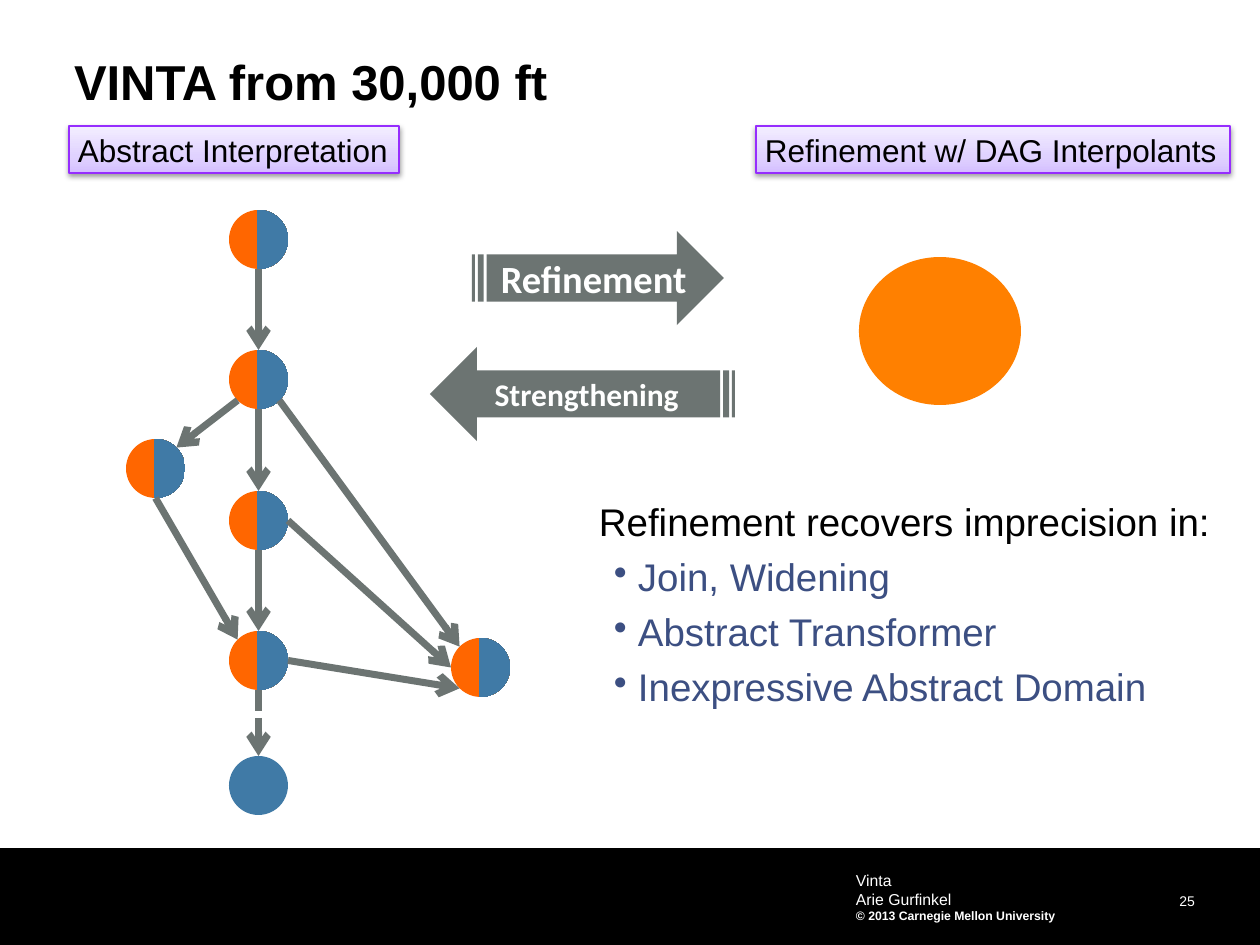
from math import cos, radians, sin

from lxml.etree import SubElement
from pptx import Presentation
from pptx.dml.color import RGBColor
from pptx.enum.dml import MSO_LINE
from pptx.enum.shapes import MSO_CONNECTOR, MSO_SHAPE
from pptx.enum.text import MSO_ANCHOR, PP_ALIGN
from pptx.oxml.ns import qn
from pptx.util import Pt

PX = 914400 / 126
BLACK = RGBColor(0x00, 0x00, 0x00)
WHITE = RGBColor(0xFF, 0xFF, 0xFF)
GRAY = RGBColor(0x6C, 0x74, 0x72)
ORANGE = RGBColor(0xFF, 0x80, 0x00)
NODE_ORANGE = RGBColor(0xFF, 0x66, 0x00)
NODE_BLUE = RGBColor(0x40, 0x7A, 0xA6)
NAVY = RGBColor(0x3C, 0x4F, 0x82)
PURPLE = RGBColor(0x96, 0x2D, 0xFE)
LABEL_STOPS = [(0, RGBColor(0xD4, 0xBF, 0xFF)), (35, RGBColor(0xE0, 0xD2, 0xFF)),
               (100, RGBColor(0xF3, 0xEE, 0xFF))]
NODE_STOPS = [(47, NODE_ORANGE), (48, NODE_BLUE)]


def add_filled(kind, box, fill, angle=0):
    """Add a preset shape; fill is a colour or a list of (percent, colour) stops."""
    shape = slide.shapes.add_shape(kind, *[round(value * PX) for value in box])
    shape.shadow.inherit = False
    shape.line.fill.background()
    if isinstance(fill, RGBColor):
        shape.fill.solid()
        shape.fill.fore_color.rgb = fill
        return shape
    shape.fill.gradient()
    gradient = shape._element.spPr.find(qn("a:gradFill"))
    for child in list(gradient):
        gradient.remove(child)
    stops = SubElement(gradient, qn("a:gsLst"))
    for percent, color in fill:
        stop = SubElement(stops, qn("a:gs"), pos=str(percent * 1000))
        SubElement(stop, qn("a:srgbClr"), val=str(color))
    SubElement(gradient, qn("a:lin"), ang=str(angle * 60000), scaled="0")
    return shape


def write(shape, lines, margins=(0, 0), anchor=MSO_ANCHOR.TOP, wrap=True, **paragraph_format):
    """Fill a shape with (text, size, bold, colour, font) lines; margins are in px."""
    frame = shape.text_frame
    side, edge = [round(value * PX) for value in margins]
    frame_format = {"margin_left": side, "margin_right": side, "margin_top": edge,
                    "margin_bottom": edge, "vertical_anchor": anchor, "word_wrap": wrap}
    for name, value in frame_format.items():
        setattr(frame, name, value)
    for index, (text, size, bold, color, font) in enumerate(lines):
        paragraph = frame.add_paragraph() if index else frame.paragraphs[0]
        for name, value in paragraph_format.items():
            setattr(paragraph, name, value)
        run = paragraph.add_run()
        run.text = text
        for name, value in {"size": Pt(size), "bold": bold, "name": font}.items():
            setattr(run.font, name, value)
        run.font.color.rgb = color


presentation = Presentation()
presentation.slide_width = round(1260 * PX)
presentation.slide_height = round(945 * PX)
slide = presentation.slides.add_slide(presentation.slide_layouts[5])

# Footer
add_filled(MSO_SHAPE.RECTANGLE, (0, 848, 1260, 97), BLACK)
page_number = slide.shapes.add_textbox(*[round(value * PX) for value in (1079, 886, 116, 23)])
write(page_number, [("25", 8, False, WHITE, "Arial")], anchor=MSO_ANCHOR.MIDDLE,
      alignment=PP_ALIGN.RIGHT, line_spacing=Pt(13))
credit = slide.shapes.add_textbox(*[round(value * PX) for value in (850, 864, 315, 66)])
write(credit, [("Vinta", 9, False, WHITE, "Arial"),
               ("Arie Gurfinkel", 9, False, WHITE, "Arial"),
               ("© 2013 Carnegie Mellon University", 7, True, WHITE, "Arial")],
      margins=(6, 6), anchor=MSO_ANCHOR.MIDDLE)

# Title
title = slide.shapes.title
title_box = {"left": 74, "top": 58, "width": 1124, "height": 53}
for name, value in title_box.items():
    setattr(title, name, round(value * PX))
write(title, [("VINTA from 30,000 ft", 28, True, BLACK, "Arial")],
      alignment=PP_ALIGN.LEFT, line_spacing=0.9)

# Column labels
for text, left, width in [("Abstract Interpretation", 69, 330),
                          ("Refinement w/ DAG Interpolants", 756, 474)]:
    label = add_filled(MSO_SHAPE.RECTANGLE, (left, 126, width, 47), LABEL_STOPS, 270)
    label.line.color.rgb = PURPLE
    label.line.width = Pt(0.75)
    effects = label._element.spPr.find(qn("a:effectLst"))
    shadow = SubElement(effects, qn("a:outerShdw"), blurRad="40000", dist="20000",
                        dir="5400000", rotWithShape="0")
    shadow_color = SubElement(shadow, qn("a:srgbClr"), val=str(BLACK))
    SubElement(shadow_color, qn("a:alpha"), val="38000")
    write(label, [(text, 18, False, BLACK, "Arial")], margins=(9, 5), wrap=False,
          alignment=PP_ALIGN.LEFT)

# Exchange between the two phases
for text, size, box, flipped in [("Refinement", 22, (472, 231, 252, 94), False),
                                 ("Strengthening", 18, (430, 347, 305, 94), True)]:
    arrow = add_filled(MSO_SHAPE.STRIPED_RIGHT_ARROW, box, GRAY)
    if flipped:
        arrow._element.spPr.find(qn("a:xfrm")).set("flipH", "1")
    write(arrow, [(text, size, True, WHITE, "Calibri")], margins=(9, 5),
          anchor=MSO_ANCHOR.MIDDLE, alignment=PP_ALIGN.CENTER)
add_filled(MSO_SHAPE.OVAL, (859, 257, 162, 148), ORANGE)

# Sources of imprecision
body = slide.shapes.add_textbox(*[round(value * PX) for value in (599, 501, 636, 367)])
causes = ["Join, Widening", "Abstract Transformer", "Inexpressive Abstract Domain"]
write(body, [("Refinement recovers imprecision in:", 22, False, BLACK, "Arial")]
      + [(cause, 22, False, NAVY, "Arial") for cause in causes],
      line_spacing=0.95, space_after=Pt(6.5))
for paragraph in body.text_frame.paragraphs[1:]:
    properties = paragraph._p.get_or_add_pPr()
    properties.set("marL", str(round(39 * PX)))
    properties.set("indent", str(round(-24 * PX)))
    SubElement(properties, qn("a:buChar"), char="•")
    paragraph.level = 1

# Control-flow graph: edges join compass points on the node circles
DIAMETER = 59
NODES = {"entry": (229, 210), "branch": (229, 350), "middle": (229, 491),
         "join": (229, 631), "left": (126, 439), "right": (451, 638), "exit": (229, 756)}
COMPASS = {"E": 0, "SE": 45, "S": 90, "SW": 135, "W": 180, "NW": 225, "N": 270, "NE": 315}
EDGES = [("entry", "S", "branch", "N"), ("branch", "S", "middle", "N"),
         ("middle", "S", "join", "N"), ("branch", "SE", "right", "NW"),
         ("middle", "E", "right", "W"), ("join", "E", "right", "SW"),
         ("branch", "SW", "left", "NE"), ("left", "S", "join", "NW"),
         ("join", "S", "exit", "N")]
for name, (left, top) in NODES.items():
    add_filled(MSO_SHAPE.OVAL, (left, top, DIAMETER, DIAMETER),
               NODE_BLUE if name == "exit" else NODE_STOPS)
for source, source_side, target, target_side in EDGES:
    ends = []
    for node, side in [(source, source_side), (target, target_side)]:
        angle = radians(COMPASS[side])
        for corner, direction in zip(NODES[node], (cos(angle), sin(angle))):
            ends.append(round((corner + DIAMETER / 2 * (1 + direction)) * PX))
    edge = slide.shapes.add_connector(MSO_CONNECTOR.STRAIGHT, *ends)
    edge.line.color.rgb = GRAY
    edge.line.width = Pt(4)
    if target == "exit":
        edge.line.dash_style = MSO_LINE.SQUARE_DOT
    SubElement(edge.line._get_or_add_ln(), qn("a:tailEnd"), type="arrow")
    SubElement(edge._element.spPr, qn("a:effectLst"))

presentation.save("out.pptx")
